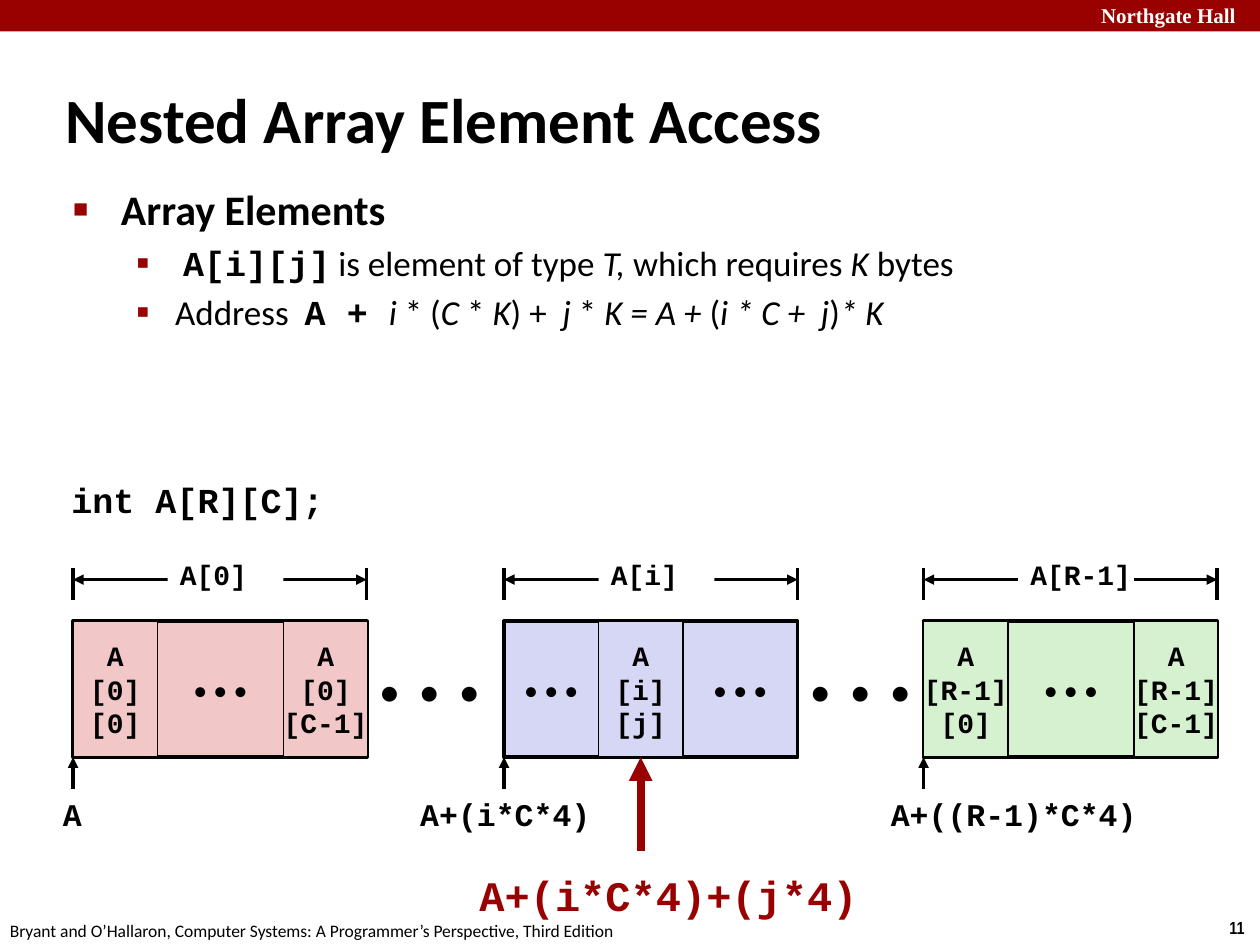
from lxml.etree import SubElement
from pptx import Presentation
from pptx.dml.color import RGBColor
from pptx.enum.shapes import MSO_CONNECTOR, MSO_SHAPE
from pptx.enum.text import MSO_ANCHOR as Anchor, MSO_AUTO_SIZE, PP_ALIGN as Align
from pptx.oxml.ns import qn
from pptx.util import Inches, Pt

BLACK = RGBColor(0x00, 0x00, 0x00)
WHITE = RGBColor(0xFF, 0xFF, 0xFF)
RED = RGBColor(0x99, 0x00, 0x00)
PINK = RGBColor(0xF1, 0xC7, 0xC7)
LAVENDER = RGBColor(0xD6, 0xD6, 0xF5)
MINT = RGBColor(0xD5, 0xF1, 0xCF)
SANS, MONO, SERIF, NARROW = "Calibri", "Courier New", "Times New Roman", "Arial Narrow"

TITLE = "Nested Array Element Access"
PLAIN, ITALIC, CODE = "plain", "italic", "code"
# level, size, bullet (character, percent), indent, runs
BULLETS = [
    (0, 24, ("■", 60), (0.38, -0.38), [("Array Elements", PLAIN)]),
    (1, 20, ("▪", 110), (0.81, -0.31), [
        (" ", PLAIN), ("A[i][j]", CODE), (" is element of type ", PLAIN), ("T, ", ITALIC),
        ("which requires ", PLAIN), ("K", ITALIC), (" bytes", PLAIN)]),
    (1, 20, ("▪", 110), (0.81, -0.31), [
        ("Address  ", PLAIN), ("A + ", CODE), ("i ", ITALIC), ("* (", PLAIN), ("C ", ITALIC),
        ("* ", PLAIN), ("K", ITALIC), (") +  ", PLAIN), ("j", ITALIC), (" * ", PLAIN),
        ("K = A + ", ITALIC), ("(", PLAIN), ("i * C +  j", ITALIC), (")", PLAIN),
        ("* K", ITALIC)]),
]

DOTS = "•\u00a0•\u00a0•"
GAP_DOTS = "• \u00a0•\u00a0 •"
FIRST, MIDDLE, LAST = 0, 0.75, 1.67  # cell offsets within a row block
ROWS = [
    dict(left=0.58, colour=PINK, label="A[0]",
         cells=[(FIRST, ["A", "[0]", "[0]"]), (LAST, ["A", "[0]", "[C-1]"])]),
    dict(left=4, colour=LAVENDER, label="A[i]",
         cells=[(MIDDLE, ["A", "[i]", "[j]"])]),
    dict(left=7.33, colour=MINT, label="A[R-1]",
         cells=[(FIRST, ["A", "[R-1]", "[0]"]), (LAST, ["A", "[R-1]", "[C-1]"])]),
]
BLOCK_TOP, BLOCK_WIDTH, BLOCK_HEIGHT, CELL_WIDTH = 4.93, 2.33, 1.08, 0.67
BLOCK_BOTTOM = BLOCK_TOP + BLOCK_HEIGHT
TICK_TOP, TICK_BOTTOM, SPAN_Y = 4.51, 4.76, 4.6
POINTER_LENGTH = 0.25
MIN_GAP = 0.1

# text, position, size, font, colour, bold, alignment
TEXTS = [
    ("Northgate Hall", (8.64, -0.03, 1.43, 0.3), 12, SERIF, WHITE, True, Align.LEFT),
    ("11", (9.66, 7.23, 0.34, 0.27), 10, NARROW, BLACK, True, Align.LEFT),
    ("Bryant and O’Hallaron, Computer Systems: A Programmer’s Perspective, Third Edition",
     (-0.02, 7.25, 5.08, 0.27), 10, SANS, BLACK, False, Align.LEFT),
    ("int A[R][C];", (0.37, 3.75, 2.3, 0.43), 20, MONO, BLACK, True, Align.RIGHT),
    ("A", (0.36, 6.26, 0.43, 0.4), 18, MONO, BLACK, True, Align.CENTER),
    ("A+(i*C*4)", (3.22, 6.26, 1.58, 0.4), 18, MONO, BLACK, True, Align.CENTER),
    ("A+((R-1)*C*4)", (6.92, 6.26, 2.25, 0.4), 18, MONO, BLACK, True, Align.CENTER),
    ("A+(i*C*4)+(j*4)", (3.69, 6.85, 3.23, 0.5), 24, MONO, RED, True, Align.CENTER),
]


def inches(values):
    return [Inches(value) for value in values]


def set_font(font, size, name, colour=BLACK, bold=False):
    font.size, font.name, font.bold = Pt(size), name, bold
    font.color.rgb = colour


def write(shape, lines, size, name, colour=BLACK, bold=False, align=Align.LEFT):
    frame = shape.text_frame
    frame.text = "\n".join(lines)
    frame.word_wrap = False
    for para in frame.paragraphs:
        para.alignment = align
        set_font(para.font, size, name, colour, bold)


def add_box(slide, place, fill, line_width=None):
    box = slide.shapes.add_shape(MSO_SHAPE.RECTANGLE, *inches(place))
    box.shadow.inherit = False
    box.fill.solid()
    box.fill.fore_color.rgb = fill
    if line_width:
        box.line.color.rgb = BLACK
        box.line.width = Pt(line_width)
    else:
        box.line.fill.background()
    box.text_frame.vertical_anchor = Anchor.MIDDLE
    return box


def add_line(slide, start, end, colour=BLACK, width=2, arrows=()):
    """Draw a straight line; arrows names its ends, headEnd before tailEnd."""
    line = slide.shapes.add_connector(MSO_CONNECTOR.STRAIGHT, *inches(start + end))
    line.line.color.rgb = colour
    line.line.width = Pt(width)
    properties = line._element.spPr
    for arrow in arrows:
        SubElement(properties.find(qn("a:ln")), qn(f"a:{arrow}"), type="triangle")
    SubElement(properties, qn("a:effectLst"))
    return line


def set_indent(para, left, first):
    properties = para._p.get_or_add_pPr()
    properties.set("marL", str(Inches(left)))
    properties.set("indent", str(Inches(first)))
    return properties


def set_bullet(para, character, percent, indent):
    properties = set_indent(para, *indent)
    colour = SubElement(properties, qn("a:buClr"))
    SubElement(colour, qn("a:srgbClr"), val=str(RED))
    SubElement(properties, qn("a:buSzPct"), val=str(percent * 1000))
    SubElement(properties, qn("a:buChar"), char=character)


def place_text(shape, place, anchor):
    shape.left, shape.top, shape.width, shape.height = inches(place)
    shape.text_frame.vertical_anchor = anchor
    shape.text_frame.auto_size = MSO_AUTO_SIZE.NONE


def fill_placeholders(slide):
    title, body = slide.placeholders
    place_text(title, (0.42, 0.62, 7.58, 0.63), Anchor.MIDDLE)
    write(title, [TITLE], 36, SANS, bold=True)
    title.text_frame.word_wrap = True
    set_indent(title.text_frame.paragraphs[0], 0.13, -0.13)

    place_text(body, (0.48, 1.41, 8.52, 1.59), Anchor.TOP)
    frame = body.text_frame
    for number, (level, size, bullet, indent, runs) in enumerate(BULLETS):
        para = frame.add_paragraph() if number else frame.paragraphs[0]
        para.level = level
        set_bullet(para, *bullet, indent)
        for text, style in runs:
            span = para.add_run()
            span.text = text
            set_font(span.font, size, MONO if style == CODE else SANS,
                     bold=style == CODE or level == 0)
            span.font.italic = style == ITALIC


def add_dots(slide, left, cells):
    """Put dots in the middle of each stretch of the block that no cell covers."""
    starts = [0] + [offset + CELL_WIDTH for offset, _ in cells]
    ends = [offset for offset, _ in cells] + [BLOCK_WIDTH]
    for start, end in zip(starts, ends):
        if end - start > MIN_GAP:
            place = (left + start, BLOCK_TOP, end - start, BLOCK_HEIGHT)
            dots = slide.shapes.add_textbox(*inches(place))
            dots.text_frame.vertical_anchor = Anchor.MIDDLE
            write(dots, [DOTS], 16, SANS, align=Align.CENTER)


def add_row(slide, left, colour, label, cells):
    """Draw one array row with its span and start pointer; return its first cell."""
    right = left + BLOCK_WIDTH
    add_box(slide, (left, BLOCK_TOP, BLOCK_WIDTH, BLOCK_HEIGHT), colour, 2.25)
    add_dots(slide, left, cells)

    boxes = []
    for offset, lines in cells:
        box = add_box(slide, (left + offset, BLOCK_TOP, CELL_WIDTH, BLOCK_HEIGHT), colour, 1)
        write(box, lines, 16, MONO, bold=True, align=Align.CENTER)
        boxes.append(box)

    for x in (left, right):
        add_line(slide, (x, TICK_TOP), (x, TICK_BOTTOM))
    add_line(slide, (left, SPAN_Y), (right, SPAN_Y), arrows=("headEnd", "tailEnd"))
    name = add_box(slide, (left + MIDDLE, 4.35, 0.92, 0.42), WHITE)
    write(name, [label], 16, MONO, bold=True)
    add_line(slide, (left, BLOCK_BOTTOM + POINTER_LENGTH), (left, BLOCK_BOTTOM),
             arrows=("tailEnd",))
    return boxes[0]


def main():
    deck = Presentation()
    deck.slide_width, deck.slide_height = Inches(10), Inches(7.5)
    slide = deck.slides.add_slide(deck.slide_layouts[1])
    add_box(slide, (0, 0, 10, 0.25), RED)
    fill_placeholders(slide)

    for row in ROWS[:-1]:
        gap = add_box(slide, (row["left"] + BLOCK_WIDTH, BLOCK_TOP, 1.08, BLOCK_HEIGHT), WHITE)
        write(gap, [GAP_DOTS], 24, SANS)
    first_cells = [add_row(slide, **row) for row in ROWS]

    element_x = ROWS[1]["left"] + MIDDLE + CELL_WIDTH / 2
    pointer = add_line(slide, (element_x, 6.75), (element_x, BLOCK_BOTTOM), RED, 4.5,
                       ("tailEnd",))
    pointer.end_connect(first_cells[1], 2)

    for text, place, size, name, colour, bold, align in TEXTS:
        write(slide.shapes.add_textbox(*inches(place)), [text], size, name, colour, bold, align)
    deck.save("out.pptx")


if __name__ == "__main__":
    main()
